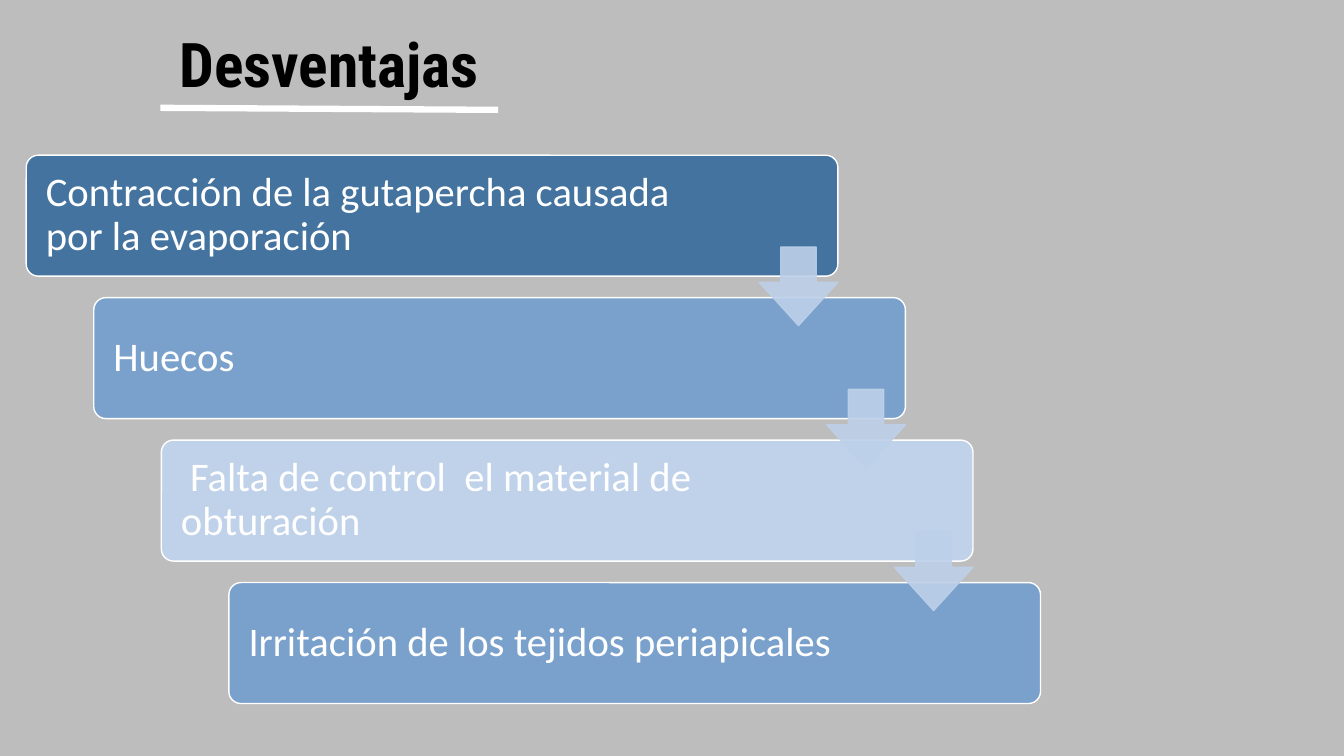
from dataclasses import dataclass

from lxml import etree
from pptx import Presentation
from pptx.dml.color import RGBColor
from pptx.enum.shapes import MSO_CONNECTOR, MSO_SHAPE
from pptx.enum.text import MSO_ANCHOR, PP_ALIGN
from pptx.oxml.ns import qn
from pptx.util import Inches, Pt

ROUNDED = MSO_SHAPE.ROUNDED_RECTANGLE
DOWN_ARROW = MSO_SHAPE.DOWN_ARROW
STRAIGHT = MSO_CONNECTOR.STRAIGHT
TOP, MIDDLE = MSO_ANCHOR.TOP, MSO_ANCHOR.MIDDLE
LEFT, CENTER = PP_ALIGN.LEFT, PP_ALIGN.CENTER


@dataclass(frozen=True)
class Theme:
    """Colours, fonts and type sizes of the slide."""
    background: str = "BDBDBD"
    title: str = "000000"
    light: str = "FFFFFF"
    dark_step: str = "43739E"
    mid_step: str = "7AA1CC"
    pale_step: str = "C0D2EA"
    arrow: str = "BDD0E9"
    title_font: str = "Roboto Condensed"
    body_font: str = "Calibri"
    title_size: int = 44
    body_size: int = 29


THEME = Theme()
STEPS = [
    ("Contracción de la gutapercha causada por la evaporación", THEME.dark_step),
    ("Huecos", THEME.mid_step),
    (" Falta de control  el material de obturación", THEME.pale_step),
    ("Irritación de los tejidos periapicales", THEME.mid_step),
]


def rgb(color):
    """Turn a hex string into a colour."""
    return RGBColor.from_string(color)


def write(tf, text, *, font, size, color, bold=False, align=LEFT, anchor=MIDDLE):
    """Put one formatted paragraph into a text frame."""
    tf.word_wrap = True
    tf.vertical_anchor = anchor
    p = tf.paragraphs[0]
    p.alignment = align
    p.line_spacing = 0.9
    r = p.add_run()
    r.text = text
    r.font.name = font
    r.font.size = Pt(size)
    r.font.bold = bold
    r.font.color.rgb = rgb(color)


def add_block(s, kind, box, fill, line, adjustments):
    """Add a flat preset shape with a one-point outline."""
    sp = s.shapes.add_shape(kind, *(Inches(v) for v in box))
    sp.shadow.inherit = False
    for i, value in enumerate(adjustments):
        sp.adjustments[i] = value
    sp.fill.solid()
    sp.fill.fore_color.rgb = rgb(fill)
    sp.line.color.rgb = rgb(line)
    sp.line.width = Pt(1)
    return sp


def add_title(s, left, top, width, height):
    """Place the title and the rule beneath it."""
    title = s.shapes.title
    title.left, title.top = Inches(left), Inches(top)
    title.width, title.height = Inches(width), Inches(height)
    write(title.text_frame, "Desventajas", font=THEME.title_font,
          size=THEME.title_size, color=THEME.title, bold=True,
          align=CENTER, anchor=TOP)
    rule = s.shapes.add_connector(
        STRAIGHT, Inches(left + 0.35), Inches(top + 0.78),
        Inches(left + 3.7), Inches(top + 0.8))
    rule.line.color.rgb = rgb(THEME.light)
    rule.line.width = Pt(4.5)
    etree.SubElement(rule.line._get_or_add_ln().getparent(), qn("a:effectLst"))


def add_step(s, text, fill, box):
    """Add one step of the staircase with its text."""
    sp = add_block(s, ROUNDED, box, fill, THEME.light, [0.1])
    tf = sp.text_frame
    tf.margin_left = Inches(0.16)
    tf.margin_right = Inches(1.6)
    tf.margin_top = tf.margin_bottom = Inches(0.12)
    write(tf, text, font=THEME.body_font, size=THEME.body_size, color=THEME.light)


def add_arrow(s, left, top, side):
    """Add a slightly transparent arrow between two steps."""
    sp = add_block(s, DOWN_ARROW, (left, top, side, side),
                   THEME.arrow, THEME.arrow, [0.45, 0.55])
    for color in sp._element.spPr.iter(qn("a:srgbClr")):
        etree.SubElement(color, qn("a:alpha"), val="90000")


def add_staircase(s, left, top, width, height):
    """Lay the steps out diagonally and link each to the next."""
    step_w, step_h, arrow = 8.05, 1.2, 0.78
    gaps = len(STEPS) - 1
    dx, dy = (width - step_w) / gaps, (height - step_h) / gaps
    for i, (text, fill) in enumerate(STEPS):
        add_step(s, text, fill, (left + i * dx, top + i * dy, step_w, step_h))
    for i in range(gaps):
        add_arrow(s, left + i * dx + step_w - arrow, top + i * dy + 0.91, arrow)


def main():
    """Build and save the slide."""
    prs = Presentation()
    prs.slide_width, prs.slide_height = Inches(13.33), Inches(7.5)
    s = prs.slides.add_slide(prs.slide_layouts[5])
    s.background.fill.solid()
    s.background.fill.fore_color.rgb = rgb(THEME.background)
    add_title(s, 1.24, 0.29, 4.05, 0.99)
    add_staircase(s, 0.26, 1.54, 10.06, 5.44)
    prs.save("out.pptx")


if __name__ == "__main__":
    main()
